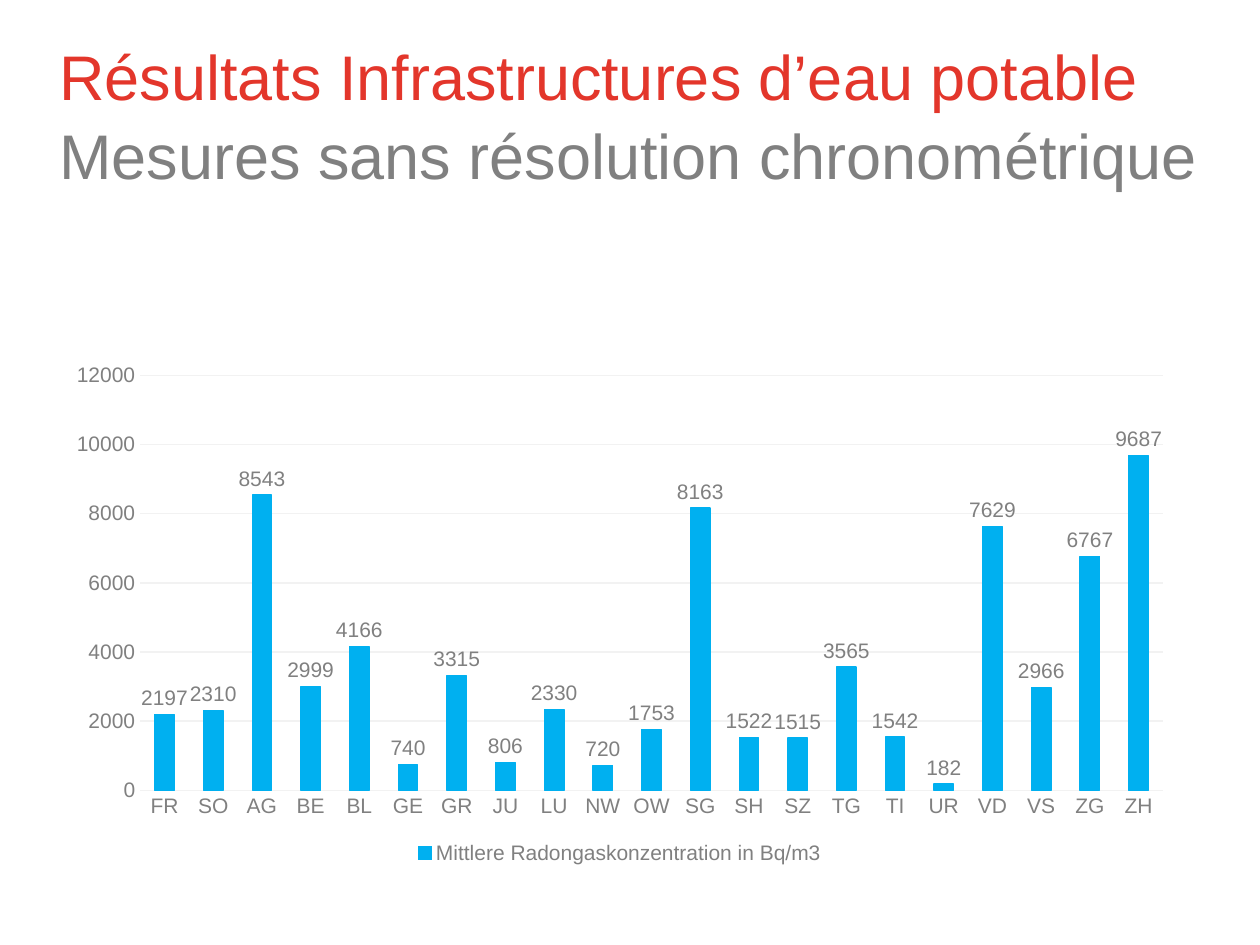
from pptx import Presentation
from pptx.chart.data import CategoryChartData
from pptx.dml.color import RGBColor
from pptx.enum.chart import XL_CHART_TYPE, XL_LABEL_POSITION, XL_LEGEND_POSITION, XL_TICK_MARK
from pptx.enum.text import MSO_ANCHOR, MSO_AUTO_SIZE, PP_ALIGN
from pptx.util import Inches, Pt

COLUMN = XL_CHART_TYPE.COLUMN_CLUSTERED
OUTSIDE_END = XL_LABEL_POSITION.OUTSIDE_END
BOTTOM = XL_LEGEND_POSITION.BOTTOM
NO_TICK = XL_TICK_MARK.NONE
MIDDLE = MSO_ANCHOR.MIDDLE
NO_AUTOFIT = MSO_AUTO_SIZE.NONE
LEFT = PP_ALIGN.LEFT

FONT = "Arial"
COLORS = {"red": "E3362B", "gray": "808080", "grid": "F2F2F2", "bar": "00B0F0"}

TITLE_LINES = [
    ("Résultats Infrastructures d’eau potable", "red"),
    ("Mesures sans résolution chronométrique", "gray"),
]
SERIES_NAME = "Mittlere Radongaskonzentration in Bq/m3"
RADON = {
    "FR": 2197, "SO": 2310, "AG": 8543, "BE": 2999, "BL": 4166, "GE": 740,
    "GR": 3315, "JU": 806, "LU": 2330, "NW": 720, "OW": 1753, "SG": 8163,
    "SH": 1522, "SZ": 1515, "TG": 3565, "TI": 1542, "UR": 182, "VD": 7629,
    "VS": 2966, "ZG": 6767, "ZH": 9687,
}


def rgb(name):
    return RGBColor.from_string(COLORS[name])


def style_font(font, size, color):
    font.name = FONT
    font.size = Pt(size)
    font.bold = False
    font.color.rgb = rgb(color)


def place_title(title, left, top, width, height):
    title.left, title.top = Inches(left), Inches(top)
    title.width, title.height = Inches(width), Inches(height)
    frame = title.text_frame
    frame.margin_left, frame.margin_top = Inches(0.04), Inches(0.08)
    frame.margin_right = frame.margin_bottom = 0
    frame.vertical_anchor = MIDDLE
    frame.auto_size = NO_AUTOFIT
    frame.word_wrap = True
    paragraph = frame.paragraphs[0]
    paragraph.alignment = LEFT
    paragraph.line_spacing = 1.05
    for index, (text, color) in enumerate(TITLE_LINES):
        if index:
            paragraph.add_line_break()
        run = paragraph.add_run()
        run.text = text
        style_font(run.font, 36, color)


def style_axis(axis):
    axis.major_tick_mark = axis.minor_tick_mark = NO_TICK
    axis.format.line.fill.background()
    style_font(axis.tick_labels.font, 12, "gray")


def add_radon_chart(slide, left, top, width, height):
    data = CategoryChartData(number_format="0")
    data.categories = list(RADON)
    data.add_series(SERIES_NAME, list(RADON.values()))
    chart = slide.shapes.add_chart(
        COLUMN, Inches(left), Inches(top), Inches(width), Inches(height), data
    ).chart
    chart.has_title = False
    chart.font.name = FONT
    chart.font.size = Pt(10)

    style_axis(chart.category_axis)
    value_axis = chart.value_axis
    style_axis(value_axis)
    value_axis.minimum_scale, value_axis.maximum_scale = 0, 12000
    value_axis.major_unit = 2000
    value_axis.tick_labels.number_format = "0"
    value_axis.tick_labels.number_format_is_linked = False
    value_axis.has_major_gridlines = True
    grid_line = value_axis.major_gridlines.format.line
    grid_line.color.rgb = rgb("grid")
    grid_line.width = Pt(0.75)

    chart.has_legend = True
    chart.legend.position = BOTTOM
    chart.legend.include_in_layout = False
    style_font(chart.legend.font, 12, "gray")

    plot = chart.plots[0]
    plot.gap_width = 150
    plot.vary_by_categories = False
    series = plot.series[0]
    series.format.fill.solid()
    series.format.fill.fore_color.rgb = rgb("bar")
    series.format.line.color.rgb = rgb("bar")
    series.format.line.width = Pt(0.75)
    labels = series.data_labels
    labels.show_value = True
    labels.position = OUTSIDE_END
    labels.number_format = "0"
    labels.number_format_is_linked = False
    style_font(labels.font, 12, "gray")


def main():
    presentation = Presentation()
    presentation.slide_width, presentation.slide_height = Inches(10), Inches(7.5)
    title_only = presentation.slide_layouts.get_by_name("Title Only")
    slide = presentation.slides.add_slide(title_only)
    place_title(slide.shapes.title, 0.43, 0.16, 9.21, 1.39)
    add_radon_chart(slide, 0.43, 2.81, 8.98, 4.09)
    presentation.save("out.pptx")


if __name__ == "__main__":
    main()
